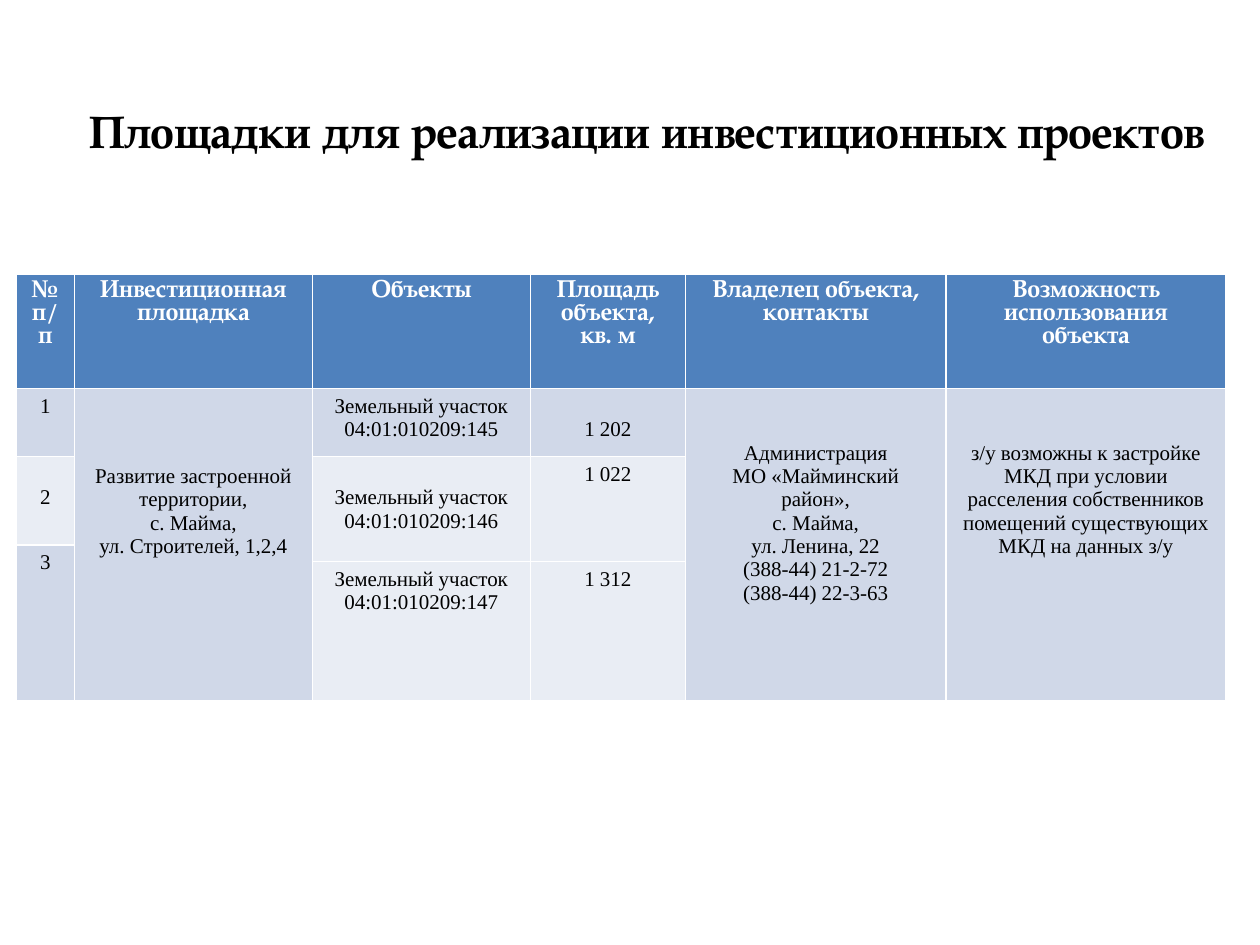
from pptx import Presentation
from pptx.dml.color import RGBColor
from pptx.enum.text import MSO_ANCHOR, PP_ALIGN
from pptx.util import Inches, Pt

BLACK = RGBColor(0, 0, 0)
WHITE = RGBColor(255, 255, 255)
BLUE = RGBColor(0x4F, 0x81, 0xBD)
BAND = RGBColor(0xD0, 0xD8, 0xE8)
LIGHT = RGBColor(0xE9, 0xED, 0xF4)
SERIF = "Times New Roman"
DISPLAY = "TeX Gyre Pagella"
LINE = Pt(13.3)
PAD = Inches(0.05)
COLS = [0.46, 1.89, 1.73, 1.23, 2.07, 2.22]
ROWS = [0.91, 0.54, 0.7, 0.13, 1.11]


def write(tf, text, size=12, font=SERIF, color=BLACK, bold=False, spacing=None):
    tf.word_wrap = True
    for i, line in enumerate(text.split("\n")):
        p = tf.paragraphs[0] if i == 0 else tf.add_paragraph()
        p.alignment = PP_ALIGN.CENTER
        if spacing:
            p.line_spacing = spacing
        r = p.add_run()
        r.text = line
        r.font.size = Pt(size)
        r.font.name = font
        r.font.bold = bold
        r.font.color.rgb = color


prs = Presentation()
prs.slide_width, prs.slide_height = Inches(10), Inches(7.5)
W, H = prs.slide_width, prs.slide_height
s = prs.slides.add_slide(prs.slide_layouts[6])

title = s.shapes.add_textbox(int(W * 0.014), int(H * 0.09), W, int(H * 0.15))
tf = title.text_frame
tf.vertical_anchor = MSO_ANCHOR.MIDDLE
tf.margin_bottom = Inches(0.45)
write(tf, "Площадки для реализации инвестиционных проектов", size=26, font=DISPLAY, bold=True)

table = s.shapes.add_table(
    len(ROWS), len(COLS), int(W * 0.013), int(H * 0.29), Inches(sum(COLS)), Inches(sum(ROWS))
).table
table.horz_banding = False
for column, width in zip(table.columns, COLS):
    column.width = Inches(width)
for row, height in zip(table.rows, ROWS):
    row.height = Inches(height)

headers = [
    "№ п/п",
    "Инвестиционная\nплощадка",
    "Объекты",
    "Площадь объекта,\nкв. м",
    "Владелец объекта, контакты",
    "Возможность использования объекта",
]
for col, text in enumerate(headers):
    cell = table.cell(0, col)
    cell.fill.solid()
    cell.fill.fore_color.rgb = BLUE
    write(cell.text_frame, text, size=14, font=DISPLAY, color=WHITE, bold=True, spacing=LINE)

site = "Развитие застроенной территории,\nс. Майма,\nул. Строителей, 1,2,4"
owner = (
    "Администрация\nМО «Майминский район»,\nс. Майма,\nул. Ленина, 22\n"
    "(388-44) 21-2-72\n(388-44) 22-3-63"
)
usage = (
    "з/у возможны к застройке МКД при условии расселения собственников "
    "помещений существующих МКД на данных з/у"
)
plot = "Земельный участок\n04:01:010209:"

body = [
    (1, 0, 1, 0, BAND, "1"),
    (1, 1, 4, 3, BAND, site),
    (1, 2, 1, 0, BAND, plot + "145"),
    (1, 3, 1, 1, BAND, "1 202"),
    (1, 4, 4, 2, BAND, owner),
    (1, 5, 4, 2, BAND, usage),
    (2, 0, 1, 1, LIGHT, "2"),
    (2, 2, 2, 1, LIGHT, plot + "146"),
    (2, 3, 2, 0, LIGHT, "1 022"),
    (3, 0, 2, 0, BAND, "3"),
    (4, 2, 1, 0, LIGHT, plot + "147"),
    (4, 3, 1, 0, LIGHT, "1 312"),
]
for row, col, span, drop, fill, text in body:
    cell = table.cell(row, col)
    if span > 1:
        cell.merge(table.cell(row + span - 1, col))
    for r in range(row, row + span):
        part = table.cell(r, col)
        part.fill.solid()
        part.fill.fore_color.rgb = fill
    cell.margin_top = PAD + drop * LINE
    write(cell.text_frame, text)

prs.save("out.pptx")
